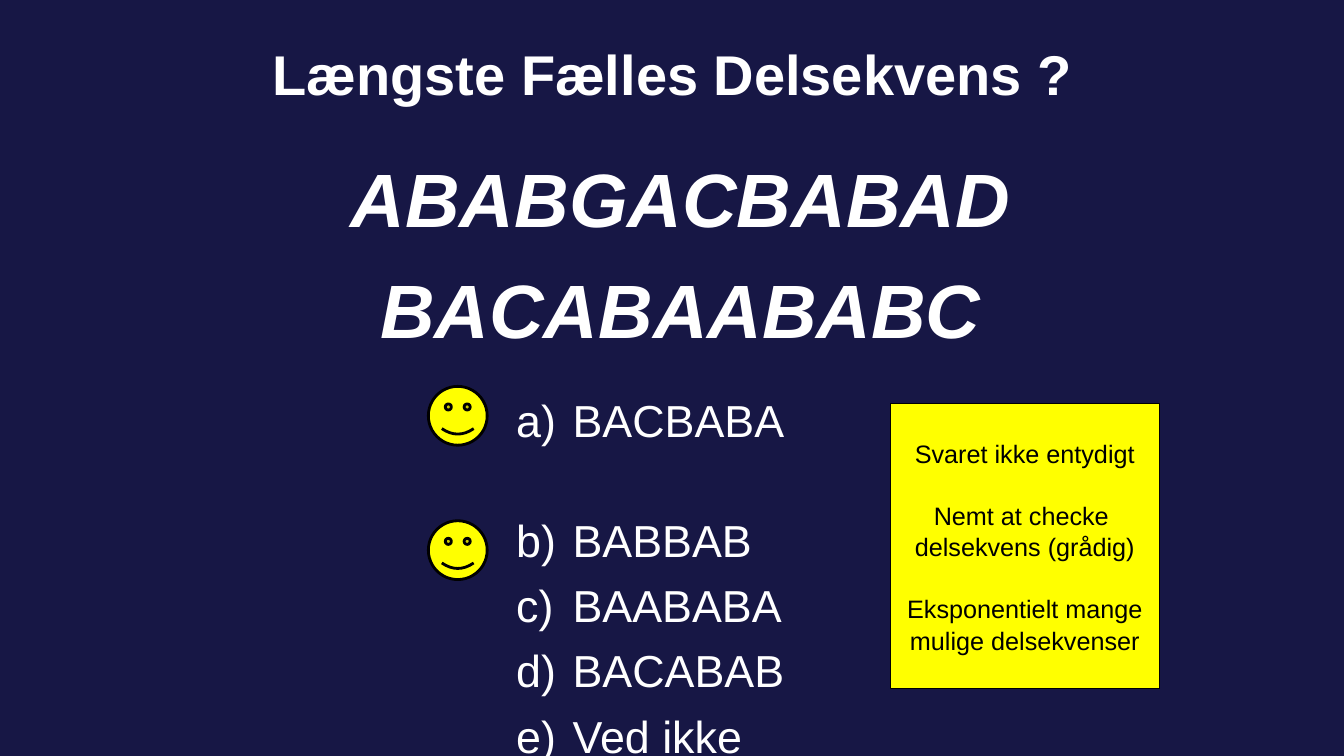
from dataclasses import dataclass

from lxml import etree
from pptx import Presentation
from pptx import util as u
from pptx.dml.color import RGBColor
from pptx.enum import shapes, text
from pptx.oxml import ns

# Slide grid: 160 columns by 90 rows of square cells
CELL = u.Inches(1 / 12)
COLUMNS, ROWS = 160, 90


@dataclass(frozen=True)
class Theme:
    background: RGBColor = RGBColor(0x17, 0x17, 0x45)
    light: RGBColor = RGBColor(0xFF, 0xFF, 0xFF)
    dark: RGBColor = RGBColor(0, 0, 0)
    accent: RGBColor = RGBColor(0xFF, 0xFF, 0)
    font: str = "Arial"
    title_size: float = 40
    sequence_size: float = 54
    answer_size: float = 32
    note_size: float = 18
    leading: float = 1.05


@dataclass(frozen=True)
class Area:
    column: float
    row: float
    columns: float
    rows: float

    def box(self) -> tuple[int, int, int, int]:
        return tuple(round(n * CELL) for n in (self.column, self.row, self.columns, self.rows))


@dataclass(frozen=True)
class Line:
    words: str
    gap: float = 0  # points above the line


THEME = Theme()
CENTER, LEFT = text.PP_ALIGN.CENTER, text.PP_ALIGN.LEFT
TOP, MIDDLE = text.MSO_ANCHOR.TOP, text.MSO_ANCHOR.MIDDLE


def place(shape, area: Area) -> None:
    shape.left, shape.top, shape.width, shape.height = area.box()


def write(frame, lines: list[Line], align, anchor, **font_format) -> None:
    """Fill a text frame, one paragraph for each line."""
    frame_format = {"word_wrap": True, "auto_size": text.MSO_AUTO_SIZE.NONE,
                    "vertical_anchor": anchor}
    for key, value in frame_format.items():
        setattr(frame, key, value)
    color = font_format.pop("color")
    for index, line in enumerate(lines):
        paragraph = frame.add_paragraph() if index else frame.paragraphs[0]
        paragraph_format = {"alignment": align, "line_spacing": THEME.leading,
                            "space_before": u.Pt(line.gap)}
        for key, value in paragraph_format.items():
            setattr(paragraph, key, value)
        run = paragraph.add_run()
        run.text = line.words
        for key, value in {"name": THEME.font, **font_format}.items():
            setattr(run.font, key, value)
        run.font.color.rgb = color


def add_yellow(slide, kind, area: Area, line_width: float):
    shape = slide.shapes.add_shape(kind, *area.box())
    shape.shadow.inherit = False
    shape.fill.solid()
    shape.fill.fore_color.rgb = THEME.accent
    shape.line.color.rgb = THEME.dark
    shape.line.width = u.Pt(line_width)
    return shape


def letter_paragraphs(frame, indent: int) -> None:
    """Number the paragraphs a), b), c) with a hanging indent."""
    for paragraph in frame.paragraphs:
        properties = paragraph._p.get_or_add_pPr()
        properties.set("marL", str(indent))
        properties.set("indent", str(-indent))
        etree.SubElement(properties, ns.qn("a:buFont"), typeface="+mj-lt")
        etree.SubElement(properties, ns.qn("a:buAutoNum"), type="alphaLcParenR")


def main() -> None:
    deck = Presentation()
    deck.slide_width, deck.slide_height = COLUMNS * CELL, ROWS * CELL
    slide = deck.slides.add_slide(deck.slide_layouts[1])
    slide.background.fill.solid()
    slide.background.fill.fore_color.rgb = THEME.background

    # Title
    title = slide.shapes.title
    place(title, Area(20, 0, 120, 17))
    write(title.text_frame, [Line("Længste Fælles Delsekvens ?")], CENTER, MIDDLE,
          size=u.Pt(THEME.title_size), bold=True, color=THEME.light)

    # The two sequences
    sequences = slide.shapes.add_textbox(*Area(26, 17, 110, 26).box())
    write(sequences.text_frame,
          [Line("ABABGACBABAD"), Line("BACABAABABC", THEME.sequence_size * 0.2)],
          CENTER, TOP, size=u.Pt(THEME.sequence_size), bold=True, italic=True,
          color=THEME.light)

    # Answers, with a wider gap after the first
    answers = slide.placeholders[1]
    place(answers, Area(60.25, 45.85, 36.85, 40))
    gap = THEME.answer_size * 0.2
    write(answers.text_frame,
          [Line("BACBABA"), Line("BABBAB", 45), Line("BAABABA", gap),
           Line("BACABAB", gap), Line("Ved ikke", gap)],
          LEFT, TOP, size=u.Pt(THEME.answer_size), color=THEME.light)
    letter_paragraphs(answers.text_frame, u.Inches(0.56))

    # Smileys beside the correct answers
    for row in (46, 62):
        add_yellow(slide, shapes.MSO_SHAPE.SMILEY_FACE, Area(51, row, 7, 7), 2)

    # Note
    note = add_yellow(slide, shapes.MSO_SHAPE.RECTANGLE, Area(106, 48, 32, 34), 0.75)
    gap = THEME.note_size * 1.2
    write(note.text_frame,
          [Line("Svaret ikke entydigt"), Line("Nemt at checke ", gap),
           Line("delsekvens (grådig)"),
           Line("Eksponentielt mange mulige delsekvenser", gap)],
          CENTER, MIDDLE, size=u.Pt(THEME.note_size), color=THEME.dark)

    deck.save("out.pptx")


if __name__ == "__main__":
    main()
